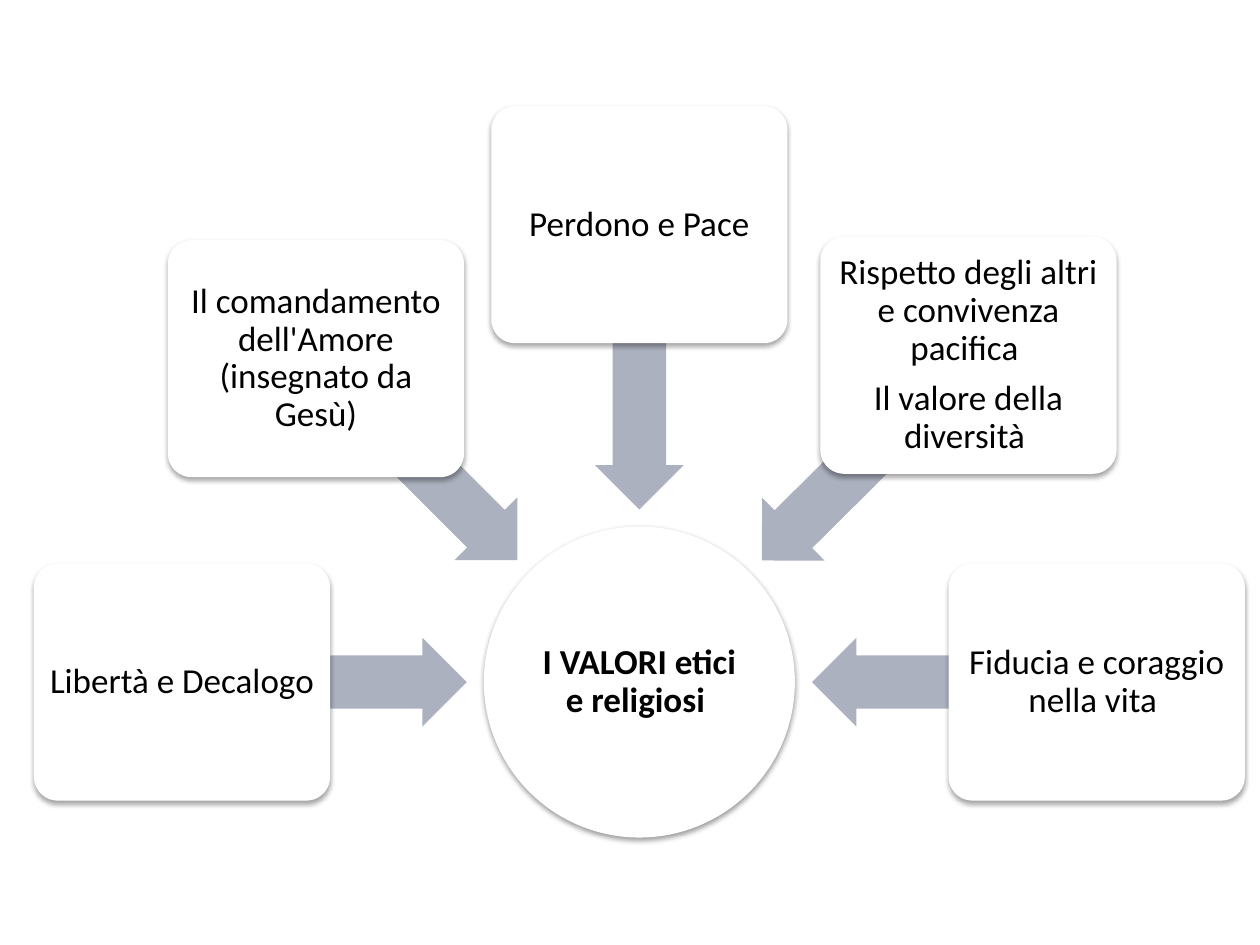
import math
from dataclasses import dataclass

import pptx
import pptx.dml.color
import pptx.enum.shapes
import pptx.enum.text
import pptx.oxml
import pptx.oxml.ns
import pptx.util
from pptx.util import Cm, Pt

COLORS = {"card": "FFFFFF", "arrow": "ACB1BF", "text": "000000", "shadow": "000000"}
SHAPE = pptx.enum.shapes.MSO_SHAPE

# Geometry in cm: spokes radiate from the hub centre
HUB_X, HUB_Y, HUB_SIZE = 12.89, 13.75, 6.27
CARD_W, CARD_H = 5.97, 4.78
ARROW_H = 1.79
TIP_RADIUS = 3.48


@dataclass(frozen=True)
class Spoke:
    angle: float  # clockwise degrees, 0 points right
    paragraphs: tuple[str, ...]
    arrow_length: float = 5.74


SPOKES = [
    Spoke(180, ("Libertà e Decalogo",)),
    Spoke(225, ("Il comandamento dell'Amore (insegnato da Gesù)",)),
    Spoke(270, ("Perdono e Pace",)),
    Spoke(315.2, ("Rispetto degli altri e convivenza pacifica ",
                  "Il valore della diversità "), 5.87),
    Spoke(0, ("Fiducia e coraggio nella vita ",)),
]


def add_centred(s, kind, x: float, y: float, w: float, h: float, color: str):
    """Add a plain filled shape centred on (x, y)."""
    sp = s.shapes.add_shape(kind, Cm(x - w / 2), Cm(y - h / 2), Cm(w), Cm(h))
    sp.fill.solid()
    sp.fill.fore_color.rgb = pptx.dml.color.RGBColor.from_string(COLORS[color])
    sp.line.fill.background()
    sp.shadow.inherit = False
    return sp


def add_shadow(sp, distance: float, opacity: int) -> None:
    """Cast a soft shadow straight down."""
    effects = sp._element.spPr.find(pptx.oxml.ns.qn("a:effectLst"))
    effects.append(pptx.oxml.parse_xml(
        f'<a:outerShdw {pptx.oxml.ns.nsdecls("a")} blurRad="{Pt(3.1)}" '
        f'dist="{Pt(distance)}" dir="5400000" rotWithShape="0">'
        f'<a:srgbClr val="{COLORS["shadow"]}"><a:alpha val="{opacity * 1000}"/>'
        '</a:srgbClr></a:outerShdw>'))


def write_text(sp, paragraphs: tuple[str, ...], inset: float, bold: bool = False) -> None:
    tf = sp.text_frame
    tf.word_wrap = True
    tf.vertical_anchor = pptx.enum.text.MSO_ANCHOR.MIDDLE
    tf.margin_left = tf.margin_right = tf.margin_top = tf.margin_bottom = Cm(inset)
    for i, text in enumerate(paragraphs):
        p = tf.add_paragraph() if i else tf.paragraphs[0]
        p.alignment = pptx.enum.text.PP_ALIGN.CENTER
        p.line_spacing = 0.9
        p.space_after = Pt(7)
        r = p.add_run()
        r.text = text
        r.font.name = "Calibri"
        r.font.size = Pt(20)
        r.font.bold = bold
        r.font.color.rgb = pptx.dml.color.RGBColor.from_string(COLORS["text"])


def add_hub(s) -> None:
    sp = add_centred(s, SHAPE.OVAL, HUB_X, HUB_Y, HUB_SIZE, HUB_SIZE, "card")
    add_shadow(sp, 1.6, 38)
    write_text(sp, ("I VALORI etici e religiosi ",), 0.03, bold=True)


def add_spoke(s, spoke: Spoke) -> None:
    def along(radius: float) -> tuple[float, float]:
        a = math.radians(spoke.angle)
        return HUB_X + radius * math.cos(a), HUB_Y + radius * math.sin(a)

    # Arrow pointing at the hub
    arrow = add_centred(s, SHAPE.LEFT_ARROW, *along(TIP_RADIUS + spoke.arrow_length / 2),
                        spoke.arrow_length, ARROW_H, "arrow")
    arrow.adjustments[0] = 0.6
    arrow.adjustments[1] = 0.5
    arrow.rotation = spoke.angle

    # Card centred on the arrow's tail
    card = add_centred(s, SHAPE.ROUNDED_RECTANGLE, *along(TIP_RADIUS + spoke.arrow_length),
                       CARD_W, CARD_H, "card")
    card.adjustments[0] = 0.1
    add_shadow(card, 1.8, 35)
    write_text(card, spoke.paragraphs, 0.1)


def main() -> None:
    prs = pptx.Presentation()
    prs.slide_width, prs.slide_height = Cm(25.4), Cm(19.05)
    s = prs.slides.add_slide(prs.slide_layouts[6])
    add_hub(s)
    for spoke in SPOKES:
        add_spoke(s, spoke)
    prs.save("out.pptx")


if __name__ == "__main__":
    main()
